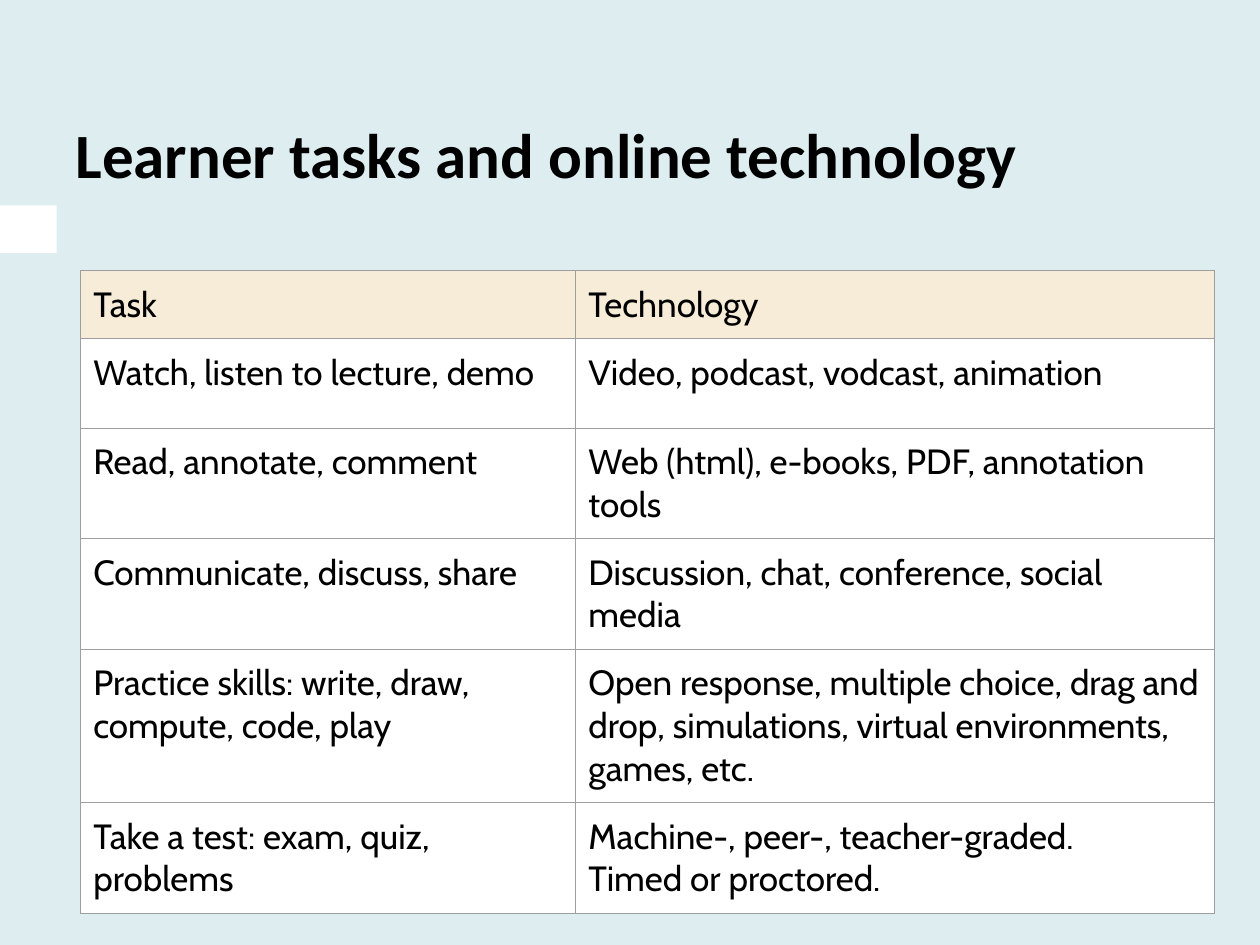
"""Build the slide on learner tasks and online technology."""
from lxml import etree
from pptx import Presentation
from pptx.dml.color import RGBColor
from pptx.enum import shapes, text
from pptx.oxml import ns
from pptx.util import Inches, Pt

TITLE = "Learner tasks and online technology"
ROWS = [
    ("Task", "Technology"),
    ("Watch, listen to lecture, demo", "Video, podcast, vodcast, animation"),
    ("Read, annotate, comment", "Web (html), e-books, PDF, annotation tools"),
    ("Communicate, discuss, share", "Discussion, chat, conference, social media"),
    ("Practice skills: write, draw, compute, code, play",
     "Open response, multiple choice, drag and drop, simulations, "
     "virtual environments, games, etc."),
    ("Take a test: exam, quiz, problems",
     "Machine-, peer-, teacher-graded. \nTimed or proctored."),
]
COL_WIDTHS = [3.93, 5.07]
ROW_HEIGHTS = [0.5, 0.71, 0.79, 0.71, 1.12, 0.79]
MARGIN = Inches(0.1)

BACKGROUND = RGBColor(0xDD, 0xED, 0xF0)
WHITE = RGBColor(0xFF, 0xFF, 0xFF)
BLACK = RGBColor(0, 0, 0)
HEADER = RGBColor(0xF7, 0xEC, 0xD7)
BORDER = RGBColor(0x9E, 0x9E, 0x9E)


def set_margins(obj):
    obj.margin_left = obj.margin_right = MARGIN
    obj.margin_top = obj.margin_bottom = MARGIN


def add_run(p, content, font, size, bold=False):
    r = p.add_run()
    r.text = content
    r.font.name, r.font.size, r.font.bold = font, Pt(size), bold
    r.font.color.rgb = BLACK


def set_borders(cell):
    tc_pr = cell._tc.get_or_add_tcPr()
    for i, side in enumerate(("lnL", "lnR", "lnT", "lnB")):
        ln = etree.Element(ns.qn(f"a:{side}"), w=str(Pt(0.75)))
        fill = etree.SubElement(ln, ns.qn("a:solidFill"))
        etree.SubElement(fill, ns.qn("a:srgbClr"), val=str(BORDER))
        tc_pr.insert(i, ln)


def fill_cell(cell, content, color):
    set_margins(cell)
    cell.fill.solid()
    cell.fill.fore_color.rgb = color
    set_borders(cell)
    p = cell.text_frame.paragraphs[0]
    for i, line in enumerate(content.split("\n")):
        if i:
            p.add_line_break()
        add_run(p, line, "Cabin", 20)


def add_title(s):
    sp = s.shapes.title
    sp.left, sp.top = Inches(0.5), Inches(0.44)
    sp.width, sp.height = Inches(9), Inches(1.56)
    tf = sp.text_frame
    set_margins(tf)
    tf.word_wrap = True
    tf.auto_size = text.MSO_AUTO_SIZE.NONE
    tf.vertical_anchor = text.MSO_ANCHOR.MIDDLE
    p = tf.paragraphs[0]
    p.alignment = text.PP_ALIGN.LEFT
    add_run(p, TITLE, "Calibri", 36, True)


def add_tab(s):
    sp = s.shapes.add_shape(shapes.MSO_SHAPE.RECTANGLE, 0, Inches(1.63),
                            Inches(0.45), Inches(0.38))
    sp.shadow.inherit = False
    sp.fill.solid()
    sp.fill.fore_color.rgb = WHITE
    sp.line.fill.background()


def add_task_table(s):
    table = s.shapes.add_table(
        len(ROWS), len(COL_WIDTHS), Inches(0.64), Inches(2.15),
        Inches(sum(COL_WIDTHS)), Inches(sum(ROW_HEIGHTS))).table
    table.horz_banding = False
    for col, width in zip(table.columns, COL_WIDTHS):
        col.width = Inches(width)
    for i, (row, height, contents) in enumerate(zip(table.rows, ROW_HEIGHTS, ROWS)):
        row.height = Inches(height)
        for cell, content in zip(row.cells, contents):
            fill_cell(cell, content, WHITE if i else HEADER)


def main():
    prs = Presentation()
    prs.slide_width, prs.slide_height = Inches(10), Inches(7.5)
    s = prs.slides.add_slide(prs.slide_layouts[5])
    s.background.fill.solid()
    s.background.fill.fore_color.rgb = BACKGROUND
    add_tab(s)
    add_title(s)
    add_task_table(s)
    prs.save("out.pptx")


if __name__ == "__main__":
    main()
